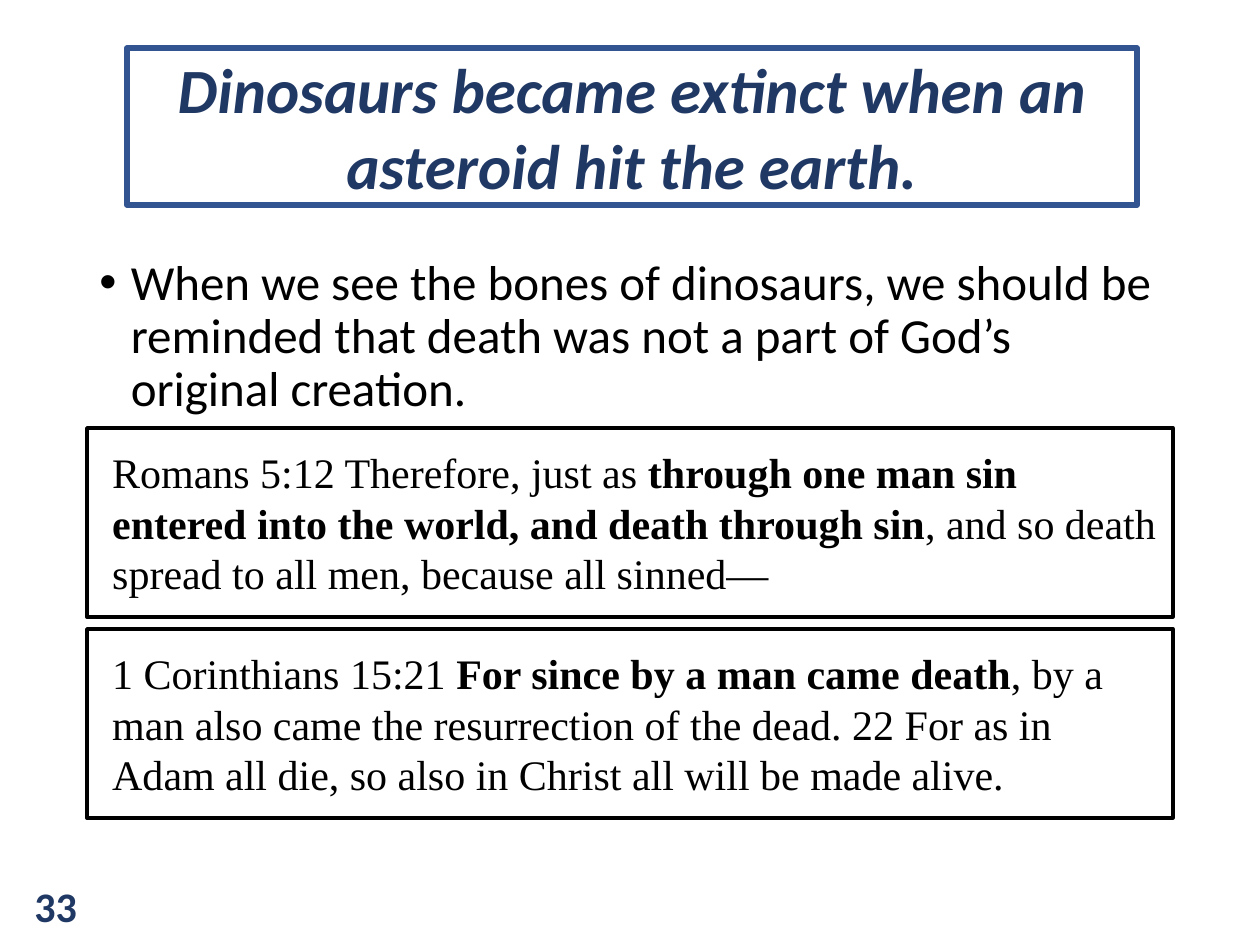
from dataclasses import dataclass

from lxml import etree
from pptx import Presentation
from pptx import util as u
from pptx.dml.color import RGBColor
from pptx.enum import shapes, text
from pptx.oxml import ns

SCALE = 914400 / 126  # EMU in one px
HUES = {"navy": "203864", "blue": "325491", "black": "000000", "white": "FFFFFF"}


@dataclass(frozen=True)
class Run:
    text: str
    bold: bool = False


@dataclass(frozen=True)
class Verse:
    top: int
    runs: tuple[Run, ...]


VERSES = (
    Verse(428, (
        Run("Romans 5:12 Therefore, just as "),
        Run("through one man sin entered into the world, and death through sin", True),
        Run(", and so death spread to all men, because all sinned—"),
    )),
    Verse(629, (
        Run("1 Corinthians 15:21 "),
        Run("For since by a man came death", True),
        Run(", by a man also came the resurrection of the dead. "
            "22 For as in Adam all die, so also in Christ all will be made alive."),
    )),
)


def px(n: int) -> u.Emu:
    return u.Emu(round(n * SCALE))


def hue(name: str) -> RGBColor:
    return RGBColor.from_string(HUES[name])


def write(shape, *runs: Run, size: int, font: str = "Calibri", color: str = "black",
          italic: bool = False, align=text.PP_ALIGN.LEFT, bullet: bool = False):
    """Fill the first paragraph of a shape with formatted runs."""
    shape.text_frame.word_wrap = True
    para = shape.text_frame.paragraphs[0]
    if bullet:
        props = para._p.get_or_add_pPr()
        props.set("marL", str(u.Inches(0.25)))
        props.set("indent", str(-u.Inches(0.25)))
        etree.SubElement(props, ns.qn("a:buFont"), typeface="Arial")
        etree.SubElement(props, ns.qn("a:buChar"), char="•")
    para.alignment = align
    for run in runs:
        part = para.add_run()
        part.text = run.text
        face = part.font
        face.name, face.size = font, u.Pt(size)
        face.bold, face.italic = run.bold, italic
        face.color.rgb = hue(color)
    return para


def frame(slide, left: int, top: int, wide: int, high: int, line: str, width: float):
    """Add a white rectangle with a coloured outline."""
    box = slide.shapes.add_shape(
        shapes.MSO_SHAPE.RECTANGLE, px(left), px(top), px(wide), px(high))
    box.shadow.inherit = False
    box.fill.solid()
    box.fill.fore_color.rgb = hue("white")
    box.line.color.rgb = hue(line)
    box.line.width = u.Pt(width)
    box.text_frame.vertical_anchor = text.MSO_ANCHOR.MIDDLE
    return box


def label(slide, left: int, top: int, wide: int, high: int):
    return slide.shapes.add_textbox(px(left), px(top), px(wide), px(high))


def main() -> None:
    deck = Presentation()
    deck.slide_width, deck.slide_height = px(1260), px(945)
    slide = deck.slides.add_slide(deck.slide_layouts[6])

    # Body text
    body = label(slide, 87, 252, 1086, 600)
    para = write(
        body,
        Run("When we see the bones of dinosaurs, we should be reminded that "
            "death was not a part of God’s original creation."),
        size=28, bullet=True)
    para.line_spacing = 0.9

    # Title
    title = frame(slide, 127, 48, 1010, 157, "blue", 3.25)
    write(title, Run("Dinosaurs became extinct when an asteroid hit the earth.", True),
          size=36, color="navy", italic=True, align=text.PP_ALIGN.CENTER)

    # Verses
    for verse in VERSES:
        box = frame(slide, 87, verse.top, 1086, 189, "black", 2)
        box.text_frame.margin_left = u.Inches(0.2)
        write(box, *verse.runs, size=24, font="Times New Roman")

    # Page number
    page = label(slide, 22, 874, 106, 63)
    write(page, Run("33", True), size=24, color="navy")
    page.text_frame.auto_size = text.MSO_AUTO_SIZE.SHAPE_TO_FIT_TEXT

    deck.save("out.pptx")


if __name__ == "__main__":
    main()
